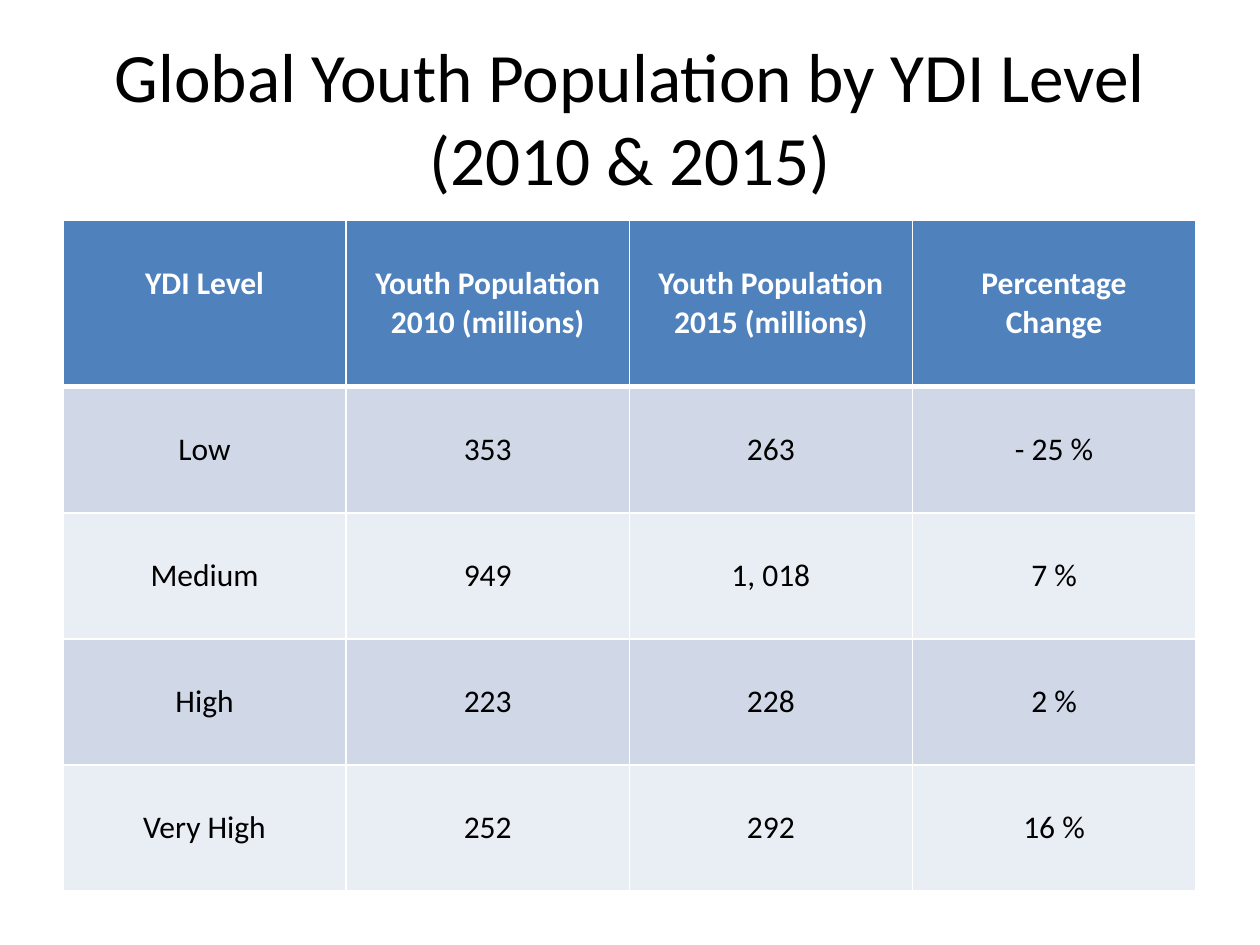
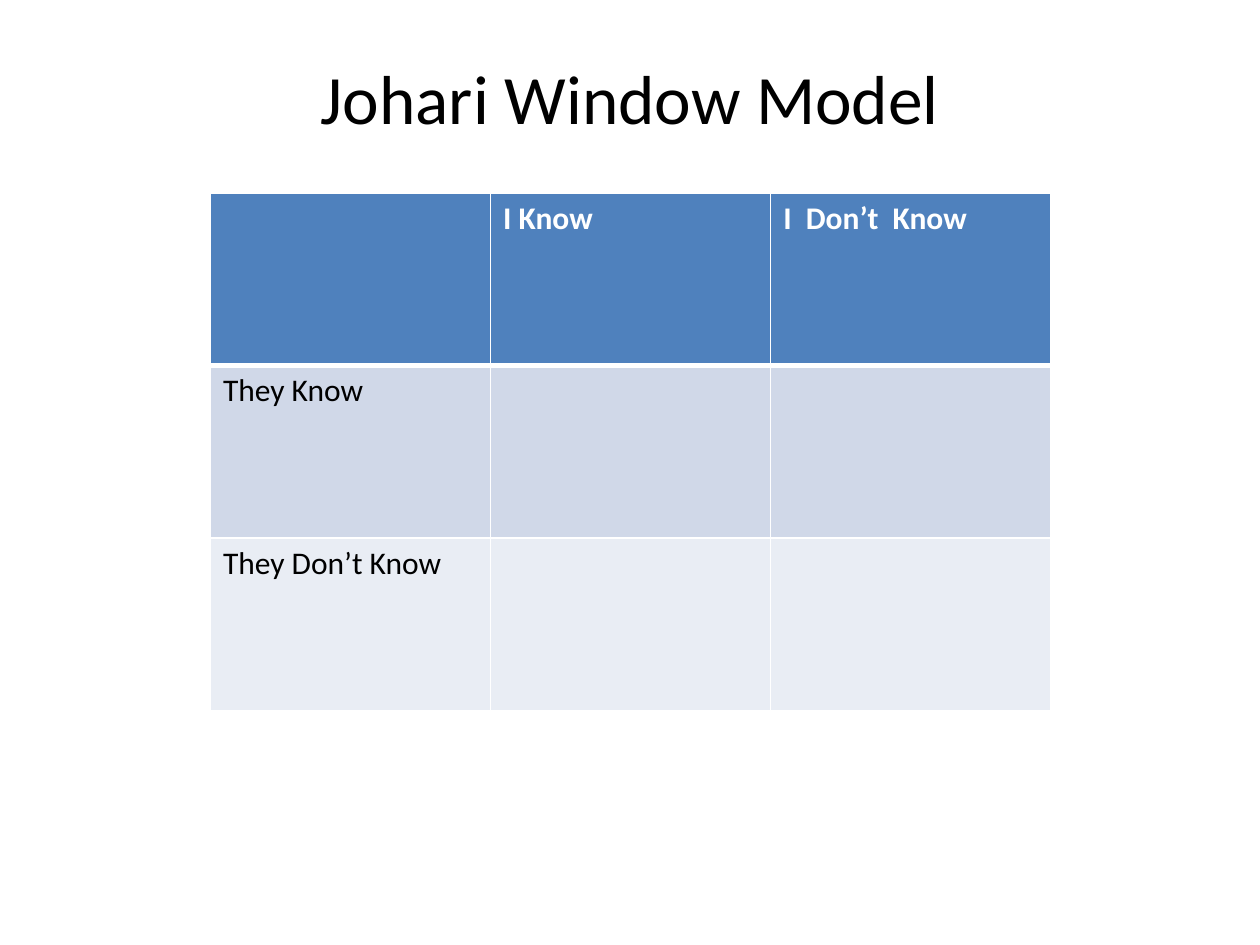
from dataclasses import dataclass

from lxml.etree import SubElement
from pptx import Presentation
from pptx.dml.color import RGBColor
from pptx.enum.text import MSO_AUTO_SIZE, PP_ALIGN
from pptx.oxml.ns import qn
from pptx.util import Inches, Pt


@dataclass(frozen=True)
class Theme:
    font: str = "Calibri"
    title_size: float = 39.6
    cell_size: int = 18
    text: str = "000000"
    header_text: str = "FFFFFF"
    header_fill: str = "4F81BD"
    band_fills: tuple = ("D0D8E8", "E9EDF4")
    border: str = "FFFFFF"
    thin_border: int = 1
    header_border: int = 3


THEME = Theme()

SLIDES = [
    {
        "title": "Global Youth Population by YDI Level (2010 & 2015)",
        "title_height": 1.25,
        "table_box": (0.5, 1.75, 8.99),
        "row_heights": (1.32, 1, 1, 1, 1),
        "alignment": PP_ALIGN.CENTER,
        "top_margin": 0.35,
        "rows": [
            ("YDI Level", "Youth Population 2010 (millions)",
             "Youth Population 2015 (millions)", "Percentage\nChange"),
            ("Low", "353", "263", "- 25 %"),
            ("Medium", "949", "1, 018", "7 %"),
            ("High", "223", "228", "2 %"),
            ("Very High", "252", "292", "16 %"),
        ],
    },
    {
        "title": "Johari Window Model",
        "title_height": 0.93,
        "table_box": (1.67, 1.53, 6.67),
        "row_heights": (1.37, 1.37, 1.37),
        "alignment": PP_ALIGN.LEFT,
        "top_margin": 0.05,
        "rows": [
            ("", "I Know", "I  Don’t  Know"),
            ("They Know", "", ""),
            ("They Don’t Know", "", ""),
        ],
    },
]


def style_paragraph(paragraph, size, color, alignment, bold=False):
    paragraph.alignment = alignment
    font = paragraph.font
    font.name = THEME.font
    font.size = Pt(size)
    font.bold = bold
    font.color.rgb = RGBColor.from_string(color)


def set_borders(cell, row_index):
    properties = cell._tc.get_or_add_tcPr()
    for side in ("lnL", "lnR", "lnT", "lnB"):
        at_header_edge = (row_index, side) in ((0, "lnB"), (1, "lnT"))
        width = THEME.header_border if at_header_edge else THEME.thin_border
        line = SubElement(properties, qn(f"a:{side}"), w=str(Pt(width)))
        fill = SubElement(line, qn("a:solidFill"))
        SubElement(fill, qn("a:srgbClr"), val=THEME.border)


def add_title(slide, text, height):
    title = slide.shapes.title
    title.left, title.top = Inches(0.5), Inches(0.3)
    title.width, title.height = Inches(9), Inches(height)
    title.text_frame.text = text
    title.text_frame.auto_size = MSO_AUTO_SIZE.NONE
    style_paragraph(title.text_frame.paragraphs[0], THEME.title_size,
                    THEME.text, PP_ALIGN.CENTER)


def style_cell(cell, row_index, content):
    is_header = row_index == 0
    fill_color = THEME.header_fill if is_header else THEME.band_fills[(row_index - 1) % 2]
    set_borders(cell, row_index)
    cell.fill.solid()
    cell.fill.fore_color.rgb = RGBColor.from_string(fill_color)
    cell.margin_top = Inches(content["top_margin"])
    for paragraph in cell.text_frame.paragraphs:
        style_paragraph(paragraph, THEME.cell_size,
                        THEME.header_text if is_header else THEME.text,
                        content["alignment"], is_header)


def add_content_table(slide, content):
    rows, heights = content["rows"], content["row_heights"]
    left, top, width = content["table_box"]
    table = slide.shapes.add_table(
        len(rows), len(rows[0]), Inches(left), Inches(top),
        Inches(width), Inches(sum(heights))).table
    for row_index, (texts, height) in enumerate(zip(rows, heights)):
        table.rows[row_index].height = Inches(height)
        for column_index, text in enumerate(texts):
            cell = table.cell(row_index, column_index)
            cell.text = text
            style_cell(cell, row_index, content)


def main():
    presentation = Presentation()
    presentation.slide_width, presentation.slide_height = Inches(10), Inches(7.5)
    for content in SLIDES:
        slide = presentation.slides.add_slide(presentation.slide_layouts[5])
        add_title(slide, content["title"], content["title_height"])
        add_content_table(slide, content)
    presentation.save("out.pptx")


if __name__ == "__main__":
    main()
